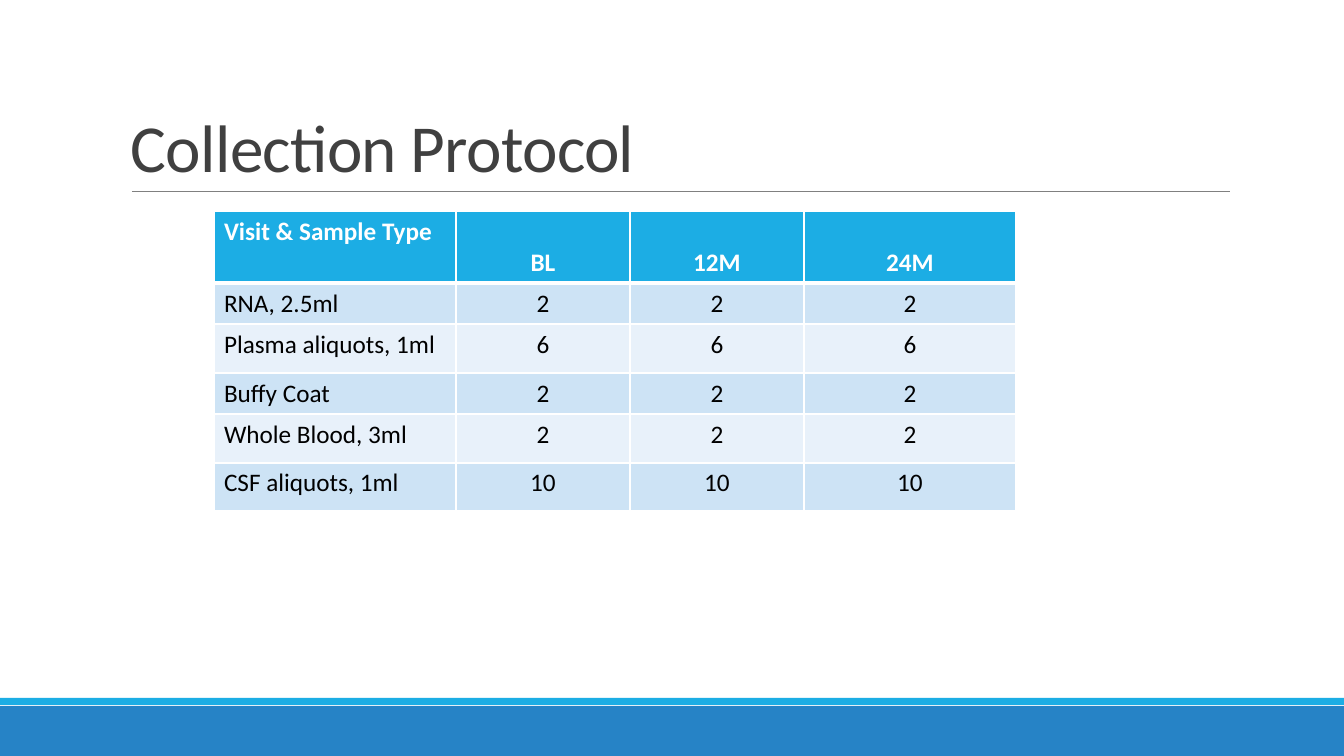
from dataclasses import dataclass

from lxml import etree
from pptx import Presentation
from pptx import util as u
from pptx.dml.color import RGBColor
from pptx.enum import shapes, text
from pptx.oxml.ns import qn

EMU_PER_PX = 914400 / 100.8


@dataclass(frozen=True)
class Theme:
    font: str = "Calibri"
    title_size: int = 48
    table_size: int = 18
    title: str = "404040"
    rule: str = "808080"
    footer: str = "2683C6"
    accent: str = "1CADE4"
    bands: tuple = ("CDE3F5", "E8F1FA")
    white: str = "FFFFFF"
    black: str = "000000"


THEME = Theme()

COLUMN_WIDTHS = (242, 174, 174, 212)
ROW_HEIGHTS = (72, 41, 49, 41, 49, 48)
SAMPLES = (
    ("Visit & Sample Type", "BL", "12M", "24M"),
    ("RNA, 2.5ml", "2", "2", "2"),
    ("Plasma aliquots, 1ml", "6", "6", "6"),
    ("Buffy Coat", "2", "2", "2"),
    ("Whole Blood, 3ml", "2", "2", "2"),
    ("CSF aliquots, 1ml", "10", "10", "10"),
)


def px(length):
    return u.Emu(round(length * EMU_PER_PX))


def rgb(colour):
    return RGBColor.from_string(colour)


def add_run(paragraph, wording, size, colour, bold=False):
    run = paragraph.add_run()
    run.text = wording
    run.font.name = THEME.font
    run.font.size = u.Pt(size)
    run.font.bold = bold
    run.font.color.rgb = rgb(colour)
    return run


def add_band(slide, top, height, colour):
    band = slide.shapes.add_shape(
        shapes.MSO_SHAPE.RECTANGLE, 0, px(top), px(1344), px(height))
    band.shadow.inherit = False
    band.fill.solid()
    band.fill.fore_color.rgb = rgb(colour)
    band.line.fill.background()


def add_rule(slide, left, right, y):
    rule = slide.shapes.add_connector(
        shapes.MSO_CONNECTOR.STRAIGHT, px(left), px(y), px(right), px(y))
    rule.line.color.rgb = rgb(THEME.rule)
    rule.line.width = u.Pt(0.5)
    etree.SubElement(rule._element.spPr, qn("a:effectLst"))


def add_title(slide, wording):
    title = slide.shapes.add_textbox(px(121), px(31), px(1109), px(160))
    frame = title.text_frame
    frame.word_wrap = True
    frame.vertical_anchor = text.MSO_ANCHOR.BOTTOM
    paragraph = frame.paragraphs[0]
    paragraph.line_spacing = 0.85
    run = add_run(paragraph, wording, THEME.title_size, THEME.title)
    run.font._element.set("spc", "-50")


def add_borders(cell, top, bottom):
    properties = cell._tc.get_or_add_tcPr()
    for side, width in (("L", 1), ("R", 1), ("T", top), ("B", bottom)):
        border = etree.SubElement(
            properties, qn(f"a:ln{side}"), w=str(u.Pt(width)))
        fill = etree.SubElement(border, qn("a:solidFill"))
        etree.SubElement(fill, qn("a:srgbClr"), val=THEME.white)


def fill_cell(cell, wording, row, column):
    header = row == 0
    add_borders(cell, top=3 if row == 1 else 1, bottom=3 if header else 1)
    cell.fill.solid()
    cell.fill.fore_color.rgb = rgb(
        THEME.accent if header else THEME.bands[(row - 1) % 2])
    paragraph = cell.text_frame.paragraphs[0]
    if column:
        paragraph.alignment = text.PP_ALIGN.CENTER
        if header:
            cell.vertical_anchor = text.MSO_ANCHOR.BOTTOM
    add_run(paragraph, wording, THEME.table_size,
            THEME.white if header else THEME.black, bold=header)


def add_sample_table(slide, left, top):
    table = slide.shapes.add_table(
        len(SAMPLES), len(COLUMN_WIDTHS), px(left), px(top),
        px(sum(COLUMN_WIDTHS)), px(sum(ROW_HEIGHTS))).table
    table.horz_banding = False
    for column, width in zip(table.columns, COLUMN_WIDTHS):
        column.width = px(width)
    for row, height in zip(table.rows, ROW_HEIGHTS):
        row.height = px(height)
    for row, sample in enumerate(SAMPLES):
        for column, wording in enumerate(sample):
            fill_cell(table.cell(row, column), wording, row, column)


def main():
    deck = Presentation()
    deck.slide_width, deck.slide_height = px(1344), px(756)
    slide = deck.slides.add_slide(deck.slide_layouts[6])
    add_band(slide, 706, 50, THEME.footer)
    add_band(slide, 698, 7, THEME.accent)
    add_rule(slide, 132, 1230, 191)
    add_title(slide, "Collection Protocol")
    add_sample_table(slide, 214, 211)
    deck.save("out.pptx")


if __name__ == "__main__":
    main()
